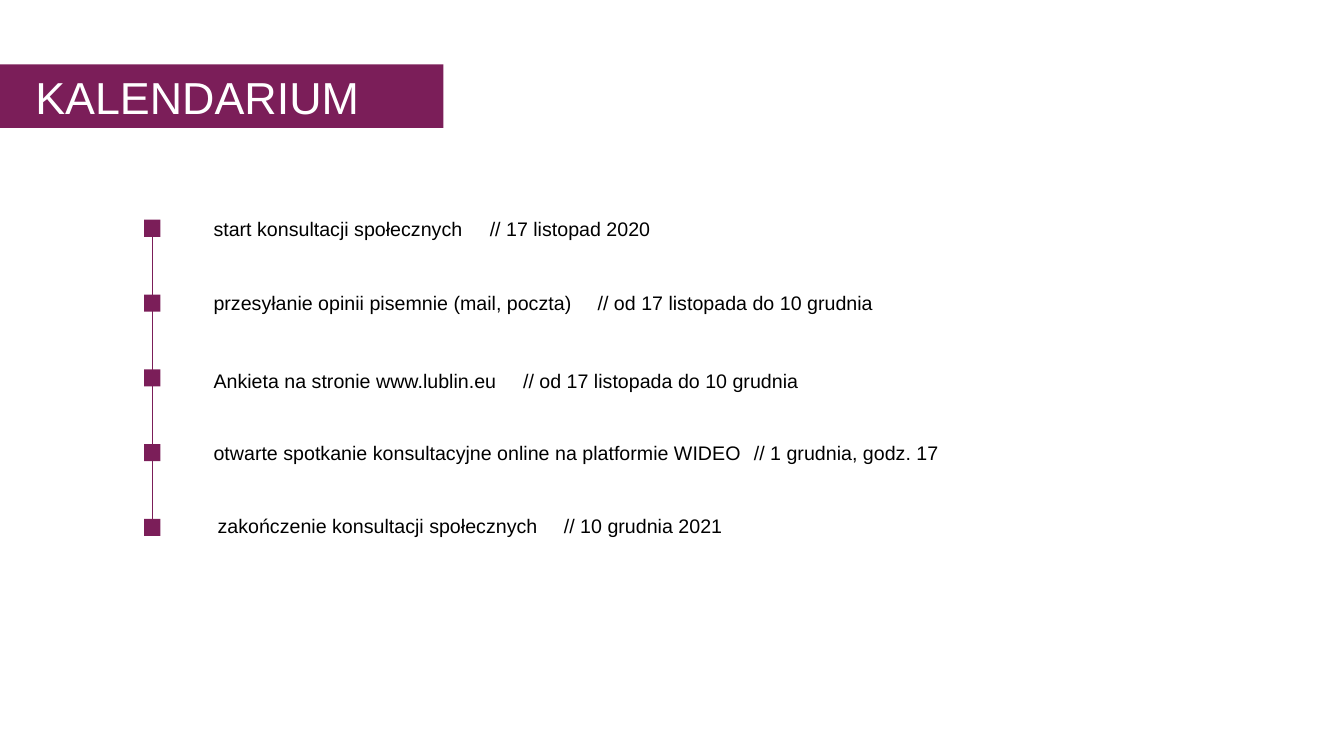
import dataclasses
import typing

import lxml.etree
import pptx
import pptx.dml.color
import pptx.enum.shapes
import pptx.enum.text
import pptx.oxml.ns
import pptx.util

PLUM = pptx.dml.color.RGBColor(0x7B, 0x1E, 0x59)
BLACK = pptx.dml.color.RGBColor(0, 0, 0)
WHITE = pptx.dml.color.RGBColor(0xFF, 0xFF, 0xFF)

SLIDE_WIDTH = pptx.util.Inches(13.33)
SLIDE_HEIGHT = pptx.util.Inches(7.5)
COLUMNS, ROWS = 100, 75

MARKER_LEFT, MARKER_TOP = 10.73, 21.8
MARKER_WIDTH, MARKER_HEIGHT = 1.2, 1.7
MARKER_PITCH = 7.42
ENTRY_HEIGHT = 3.3


@dataclasses.dataclass(frozen=True)
class Event:
    """A timeline entry, placed in grid units, with the date at a tab stop."""

    name: str
    date: str
    top: float
    width: float
    date_offset: float
    left: float = 15.15


EVENTS = [
    Event("start konsultacji społecznych", "// 17 listopad 2020", 21, 35.03, 20.55),
    Event("przesyłanie opinii pisemnie (mail, poczta)",
          "// od 17 listopada do 10 grudnia", 28.4, 66.92, 28.58),
    Event("Ankieta na stronie www.lublin.eu",
          "// od 17 listopada do 10 grudnia", 36.1, 48.31, 23.03),
    Event("otwarte spotkanie konsultacyjne online na platformie WIDEO",
          "// 1 grudnia, godz. 17", 43.3, 60.84, 40.2),
    Event("zakończenie konsultacji społecznych", "// 10 grudnia 2021",
          50.5, 60.84, 25.77, left=15.45),
]


def across(columns: float) -> int:
    """Return the length of a number of grid columns."""
    return round(SLIDE_WIDTH * columns / COLUMNS)


def down(rows: float) -> int:
    """Return the length of a number of grid rows."""
    return round(SLIDE_HEIGHT * rows / ROWS)


def apply_format(target: typing.Any, values: dict[str, typing.Any]) -> None:
    """Set each named attribute of the target."""
    for name, value in values.items():
        setattr(target, name, value)


def write_text(shape: typing.Any, text: str, size: float,
               color: pptx.dml.color.RGBColor, margin_left: int) -> typing.Any:
    """Fill a shape with one left-aligned paragraph and return it."""
    frame = shape.text_frame
    apply_format(frame, {
        "word_wrap": True,
        "auto_size": pptx.enum.text.MSO_AUTO_SIZE.SHAPE_TO_FIT_TEXT,
        "vertical_anchor": pptx.enum.text.MSO_ANCHOR.TOP,
        "margin_left": margin_left,
    })
    paragraph = frame.paragraphs[0]
    paragraph.alignment = pptx.enum.text.PP_ALIGN.LEFT
    run = paragraph.add_run()
    run.text = text
    apply_format(run.font, {"name": "Arial", "size": pptx.util.Pt(size)})
    run.font.color.rgb = color
    return paragraph


def add_block(slide: typing.Any, left: float, top: float,
              width: float, height: float) -> typing.Any:
    """Draw a plain plum rectangle in grid units."""
    block = slide.shapes.add_shape(
        pptx.enum.shapes.MSO_SHAPE.RECTANGLE,
        across(left), down(top), across(width), down(height))
    block.shadow.inherit = False
    block.fill.solid()
    block.fill.fore_color.rgb = PLUM
    block.line.fill.background()
    return block


def add_timeline(slide: typing.Any, first: typing.Any, last: typing.Any) -> None:
    """Join the first and last markers with a thin line."""
    timeline = slide.shapes.add_connector(
        pptx.enum.shapes.MSO_CONNECTOR.STRAIGHT, 0, 0, 0, 0)
    timeline.begin_connect(first, 2)
    timeline.end_connect(last, 2)
    timeline.line.color.rgb = PLUM
    timeline.line.width = pptx.util.Pt(0.75)
    lxml.etree.SubElement(timeline.element.spPr, pptx.oxml.ns.qn("a:effectLst"))


def add_event(slide: typing.Any, event: Event) -> None:
    """Write an event with its date at a tab stop."""
    entry = slide.shapes.add_textbox(
        across(event.left), down(event.top),
        across(event.width), down(ENTRY_HEIGHT))
    paragraph = write_text(entry, f"{event.name}\t{event.date}", 14, BLACK,
                           pptx.util.Inches(0.1))
    properties = paragraph._p.get_or_add_pPr()
    tabs = lxml.etree.SubElement(properties, pptx.oxml.ns.qn("a:tabLst"))
    lxml.etree.SubElement(tabs, pptx.oxml.ns.qn("a:tab"),
                          pos=str(across(event.date_offset)), algn="l")


def main() -> None:
    """Build the calendar slide and save it."""
    deck = pptx.Presentation()
    apply_format(deck, {"slide_width": SLIDE_WIDTH, "slide_height": SLIDE_HEIGHT})
    slide = deck.slides.add_slide(deck.slide_layouts[6])

    markers = [
        add_block(slide, MARKER_LEFT, MARKER_TOP + index * MARKER_PITCH,
                  MARKER_WIDTH, MARKER_HEIGHT)
        for index in range(len(EVENTS))
    ]
    add_timeline(slide, markers[0], markers[-1])
    for event in EVENTS:
        add_event(slide, event)

    heading = add_block(slide, 0, 6.4, 33, 6.3)
    write_text(heading, "KALENDARIUM", 32, WHITE, pptx.util.Inches(0.35))
    deck.save("out.pptx")


if __name__ == "__main__":
    main()
